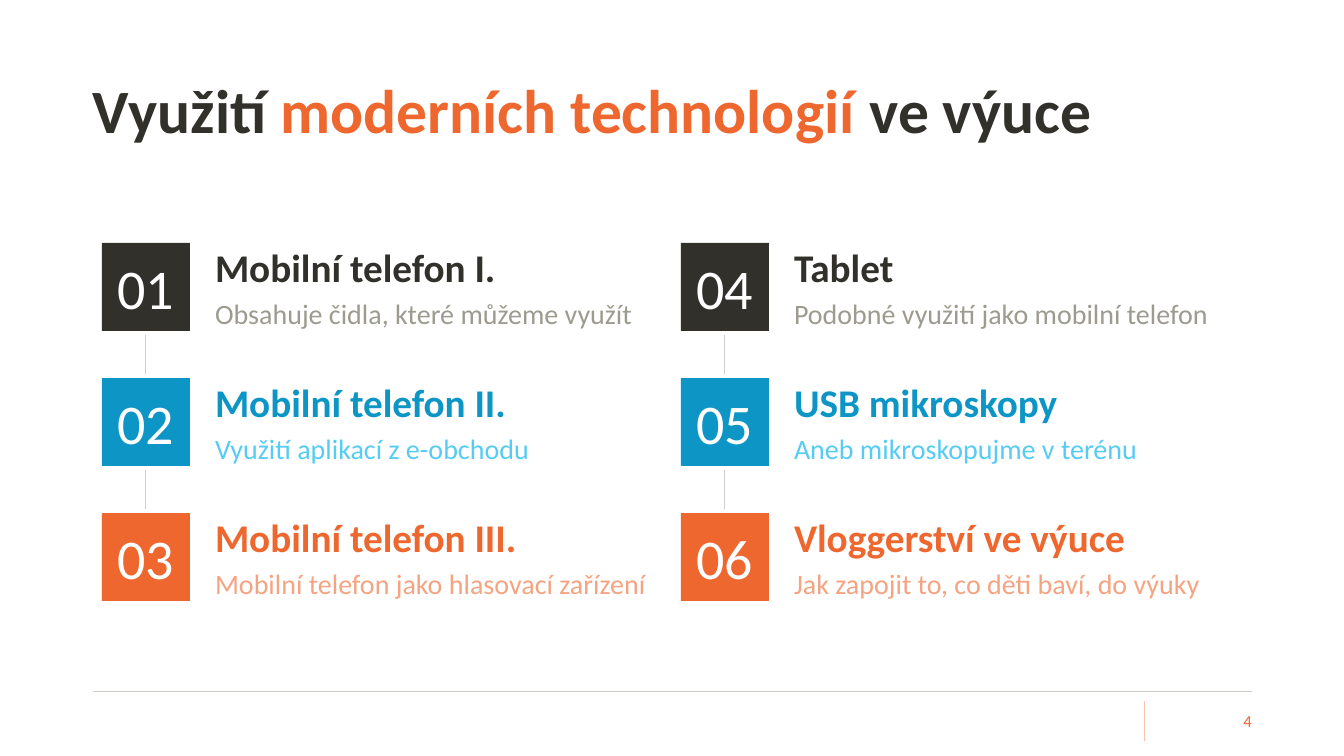
"""Builds the slide on modern technologies in teaching."""
from lxml import etree
from pptx import Presentation
from pptx.dml.color import RGBColor
from pptx.enum.shapes import MSO_CONNECTOR, MSO_SHAPE
from pptx.enum.text import MSO_ANCHOR, MSO_AUTO_SIZE, PP_ALIGN
from pptx.oxml.ns import qn
from pptx.util import Emu, Pt

STRAIGHT = MSO_CONNECTOR.STRAIGHT
RECTANGLE = MSO_SHAPE.RECTANGLE
TOP, MIDDLE = MSO_ANCHOR.TOP, MSO_ANCHOR.MIDDLE
LEFT, CENTER, RIGHT = PP_ALIGN.LEFT, PP_ALIGN.CENTER, PP_ALIGN.RIGHT
NO_AUTOFIT = MSO_AUTO_SIZE.NONE

FONT = "Calibri"
WHITE = RGBColor(0xFF, 0xFF, 0xFF)
DARK = RGBColor(0x31, 0x30, 0x2B)
GREY = RGBColor(0x9D, 0x9B, 0x90)
BLUE = RGBColor(0x0D, 0x96, 0xC5)
LIGHT_BLUE = RGBColor(0x56, 0xCC, 0xF4)
ORANGE = RGBColor(0xEE, 0x67, 0x2F)
LIGHT_ORANGE = RGBColor(0xF5, 0xA4, 0x82)
FOOTER_RULE = RGBColor(0xCE, 0xCD, 0xC7)
FOOTER_DIVIDER = RGBColor(0xF8, 0xC2, 0xAC)
STEP_LINK = RGBColor(0xD0, 0xCE, 0xCE)

HEADLINE = [
    ("Využití ", DARK),
    ("moderních technologií ", ORANGE),
    ("ve výuce", DARK),
]
TOPIC_COLUMNS = [
    [
        ("Mobilní telefon I.", "Obsahuje čidla, které můžeme využít"),
        ("Mobilní telefon II.", "Využití aplikací z e-obchodu"),
        ("Mobilní telefon III.", "Mobilní telefon jako hlasovací zařízení"),
    ],
    [
        ("Tablet", "Podobné využití jako mobilní telefon"),
        ("USB mikroskopy", "Aneb mikroskopujme v terénu"),
        ("Vloggerství ve výuce", "Jak zapojit to, co děti baví, do výuky"),
    ],
]
ROW_COLORS = [(DARK, GREY), (BLUE, LIGHT_BLUE), (ORANGE, LIGHT_ORANGE)]
PAGE_NUMBER = "4"

PX = 12192000 / 1344
GRID_LEFT, GRID_TOP = 102, 243
COLUMN_PITCH, ROW_PITCH = 579, 135
BADGE = 88
TEXT_SHIFT, TEXT_WIDTH = 103, 465
DETAIL_SHIFT = 53
LINK_GAP = 4


def px(*lengths):
    return [Emu(round(length * PX)) for length in lengths]


def set_frame(frame, anchor, insets):
    frame.word_wrap = True
    frame.auto_size = NO_AUTOFIT
    frame.vertical_anchor = anchor
    (frame.margin_left, frame.margin_top,
     frame.margin_right, frame.margin_bottom) = px(*insets)


def set_font(paragraph, size, color, bold=False, align=LEFT):
    paragraph.alignment = align
    font = paragraph.font
    font.name, font.size, font.bold = FONT, Pt(size), bold
    font.color.rgb = color


def add_label(slide, text, box, size, color, bold=False, align=LEFT,
              anchor=TOP, insets=(10, 0, 10, 0)):
    frame = slide.shapes.add_textbox(*px(*box)).text_frame
    set_frame(frame, anchor, insets)
    frame.text = text
    set_font(frame.paragraphs[0], size, color, bold, align)


def add_rule(slide, ends, color):
    rule = slide.shapes.add_connector(STRAIGHT, *px(*ends))
    rule.line.color.rgb = color
    rule.line.width = Pt(0.5)
    etree.SubElement(rule._element.spPr, qn("a:effectLst"))


def add_badge(slide, number, x, y, color):
    badge = slide.shapes.add_shape(RECTANGLE, *px(x, y, BADGE, BADGE))
    badge.shadow.inherit = False
    badge.fill.solid()
    badge.fill.fore_color.rgb = color
    badge.line.fill.background()
    frame = badge.text_frame
    set_frame(frame, MIDDLE, (10, 5, 10, 5))
    frame.text = f"{number:02d}"
    set_font(frame.paragraphs[0], 40, WHITE, align=CENTER)


def add_headline(slide):
    title = slide.shapes.title
    title.left, title.top, title.width, title.height = px(93, 41, 1055, 146)
    set_frame(title.text_frame, MIDDLE, (0, 5, 10, 5))
    paragraph = title.text_frame.paragraphs[0]
    paragraph.line_spacing = 0.9
    for words, color in HEADLINE:
        run = paragraph.add_run()
        run.text = words
        run.font.color.rgb = color
    set_font(paragraph, 44, DARK, bold=True)


def add_topics(slide):
    for column, topics in enumerate(TOPIC_COLUMNS):
        x = GRID_LEFT + column * COLUMN_PITCH
        text_x = x + TEXT_SHIFT
        for row, (heading, detail) in enumerate(topics):
            y = GRID_TOP + row * ROW_PITCH
            strong, soft = ROW_COLORS[row]
            add_label(slide, heading, (text_x, y, TEXT_WIDTH, 47), 28, strong, bold=True)
            add_label(slide, detail, (text_x, y + DETAIL_SHIFT, TEXT_WIDTH, 34), 20, soft)
            add_badge(slide, column * len(topics) + row + 1, x, y, strong)
            if row:
                link_x = x + BADGE // 2 - 1
                link_top = y - ROW_PITCH + BADGE + LINK_GAP
                add_rule(slide, (link_x, link_top, link_x, y - LINK_GAP), STEP_LINK)


def add_footer(slide):
    add_rule(slide, (93, 691, 1252, 691), FOOTER_RULE)
    add_rule(slide, (1144, 701, 1144, 741), FOOTER_DIVIDER)
    add_label(slide, PAGE_NUMBER, (1156, 701, 96, 40), 12, ORANGE,
              align=RIGHT, anchor=MIDDLE, insets=(0, 5, 0, 5))


def main():
    deck = Presentation()
    deck.slide_width, deck.slide_height = px(1344, 756)
    slide = deck.slides.add_slide(deck.slide_layouts.get_by_name("Title Only"))
    add_headline(slide)
    add_topics(slide)
    add_footer(slide)
    deck.save("out.pptx")


if __name__ == "__main__":
    main()
